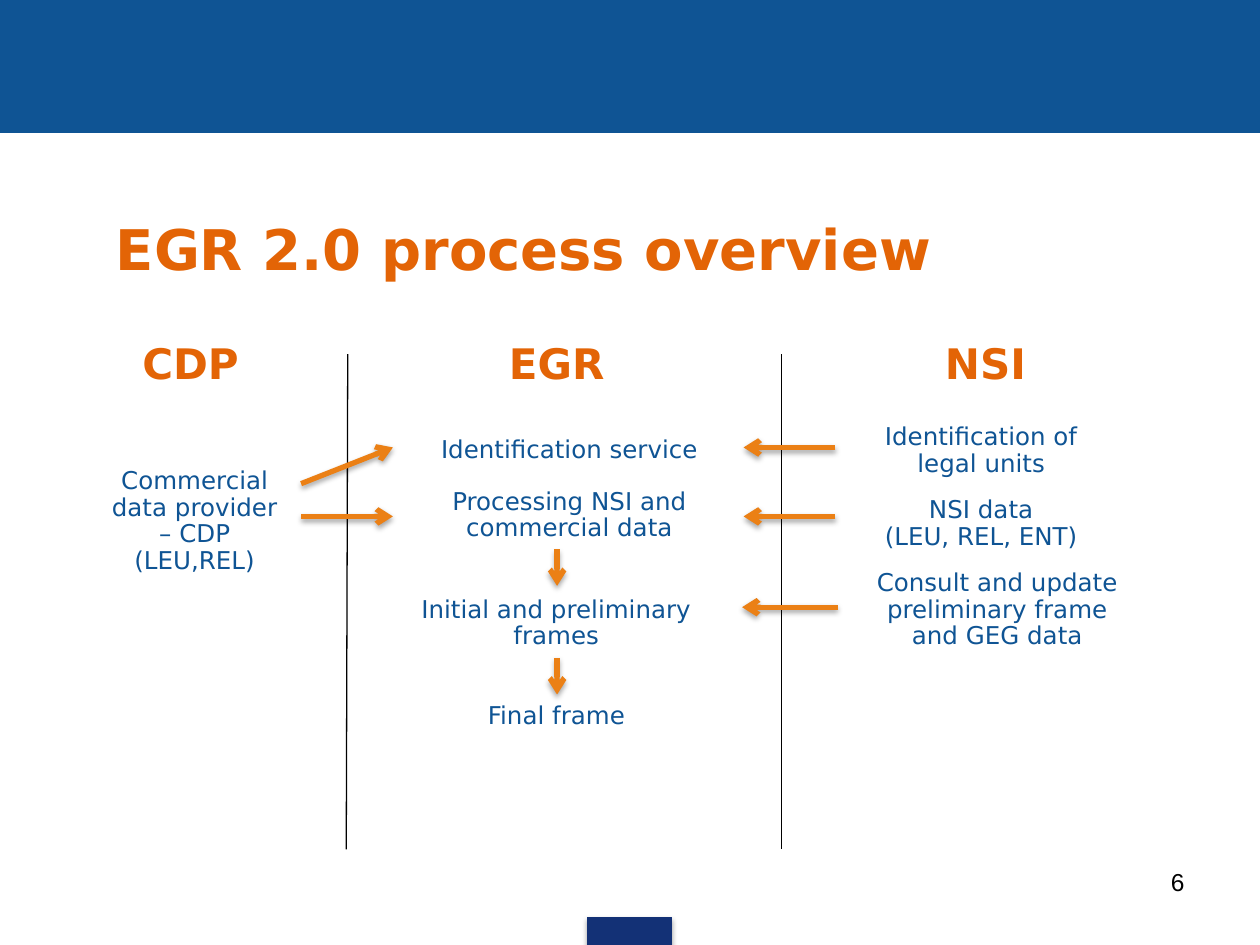
from dataclasses import dataclass

from lxml.etree import SubElement
from pptx import Presentation
from pptx.dml.color import RGBColor
from pptx.enum.shapes import MSO_CONNECTOR as Connector, MSO_SHAPE as Shape
from pptx.enum.text import MSO_ANCHOR as Anchor, MSO_AUTO_SIZE as AutoSize, PP_ALIGN as Align
from pptx.oxml.ns import qn
from pptx.util import Cm, Pt


@dataclass(frozen=True)
class Theme:
    """Colours, fonts and type sizes of the slide."""
    blue: str = "0F5494"
    navy: str = "133176"
    orange: str = "E36406"
    arrow: str = "EB8015"
    black: str = "000000"
    font: str = "DejaVu Sans"
    number_font: str = "Arial"
    title: int = 32
    heading: int = 24
    body: int = 14


THEME = Theme()
HEADING_INDENT = Cm(0.99)
HEADINGS = [("CDP", 1.63, 4.6), ("EGR", 9.02, 3.99), ("NSI", 17.81, 3.94)]
LABELS = [
    ("Commercial data provider – CDP (LEU,REL)", 1.83, 9.32, 4.19, 2.41),
    ("Identification service", 8.51, 8.69, 5.94, 0.79),
    ("Processing NSI and commercial data", 8.51, 9.73, 5.94, 1.35),
    ("Initial and preliminary frames", 7.95, 11.91, 6.53, 1.35),
    ("Final frame", 8.59, 14.05, 5.26, 0.79),
    ("Identification of legal units", 17.48, 8.43, 4.6, 1.35),
    ("NSI data\v(LEU, REL, ENT)", 17.48, 9.91, 4.6, 1.35),
    ("Consult and update preliminary frame and GEG data", 17.3, 11.38, 5.61, 1.88),
]
DIVIDERS = [(7.01, 7.14, 6.98, 17.12), (15.75, 7.14, 15.75, 17.12)]
ARROWS = [
    (6.07, 9.75, 7.92, 9.02),
    (6.07, 10.41, 7.92, 10.41),
    (16.84, 9.02, 14.99, 9.02),
    (16.84, 10.41, 14.99, 10.41),
    (16.89, 12.24, 14.96, 12.24),
    (11.23, 11.07, 11.23, 11.81),
    (11.23, 13.26, 11.23, 14),
]


def add_effects(shape, shadow):
    """Give a shape an effect list, holding a soft shadow or nothing."""
    effects = SubElement(shape._element.spPr, qn("a:effectLst"))
    if shadow:
        outer = SubElement(effects, qn("a:outerShdw"), blurRad="39370", dist="23000",
                           dir="5400000", rotWithShape="0")
        color = SubElement(outer, qn("a:srgbClr"), val=THEME.black)
        SubElement(color, qn("a:alpha"), val="35000")


def add_bar(slide, box, color, shadow=False):
    """Add a plain filled rectangle."""
    bar = slide.shapes.add_shape(Shape.RECTANGLE, *map(Cm, box))
    bar.fill.solid()
    bar.fill.fore_color.rgb = RGBColor.from_string(color)
    bar.line.color.rgb = RGBColor.from_string(color)
    bar.line.width = Pt(0.75)
    add_effects(bar, shadow)


def add_line(slide, ends, color, width, arrow=False):
    """Add a straight line, or a shadowed arrow pointing at its end."""
    line = slide.shapes.add_connector(Connector.STRAIGHT, *map(Cm, ends))
    line.line.color.rgb = RGBColor.from_string(color)
    line.line.width = Pt(width)
    if arrow:
        SubElement(line.line._get_or_add_ln(), qn("a:tailEnd"), type="arrow")
    add_effects(line, arrow)


def write_text(shape, text, size, color, align, font=THEME.font, bold=False, indent=0):
    """Fill a shape with one formatted paragraph and return the paragraph."""
    frame = shape.text_frame
    frame.text = text
    frame.word_wrap = True
    frame.auto_size = AutoSize.NONE
    paragraph = frame.paragraphs[0]
    paragraph.alignment = align
    if indent:
        properties = paragraph._p.get_or_add_pPr()
        properties.set("marL", str(indent))
        properties.set("indent", "0")
    for run in paragraph.runs:
        run.font.name = font
        run.font.size = Pt(size)
        run.font.bold = bold
        run.font.color.rgb = RGBColor.from_string(color)
    return paragraph


def add_text(slide, box, *content, **style):
    """Add a text box and return its paragraph."""
    return write_text(slide.shapes.add_textbox(*map(Cm, box)), *content, **style)


def set_title(slide, text):
    """Place and format the title placeholder."""
    title = slide.shapes.title
    title.left, title.top, title.width, title.height = map(Cm, (1.09, 4.11, 22.86, 1.8))
    write_text(title, text, THEME.title, THEME.orange, Align.LEFT,
               bold=True, indent=HEADING_INDENT)
    title.text_frame.vertical_anchor = Anchor.MIDDLE


def main():
    """Build the slide and save it."""
    presentation = Presentation()
    presentation.slide_width, presentation.slide_height = Cm(25.4), Cm(19.05)
    slide = presentation.slides.add_slide(presentation.slide_layouts[5])
    add_bar(slide, (0, 0, 25.4, 2.67), THEME.blue)
    add_bar(slide, (11.84, 18.49, 1.7, 0.56), THEME.navy, shadow=True)
    set_title(slide, "EGR 2.0 process overview")
    for ends in DIVIDERS:
        add_line(slide, ends, THEME.black, 0.75)
    for text, left, width in HEADINGS:
        add_text(slide, (left, 6.68, width, 1.27), text, THEME.heading, THEME.orange,
                 Align.LEFT, bold=True, indent=HEADING_INDENT)
    for text, *box in LABELS:
        paragraph = add_text(slide, box, text, THEME.body, THEME.blue, Align.CENTER)
        paragraph.line_spacing = 0.9
    for ends in ARROWS:
        add_line(slide, ends, THEME.arrow, 3, arrow=True)
    add_text(slide, (18.21, 17.35, 5.92, 1.32), "6", THEME.body, THEME.black,
             Align.RIGHT, font=THEME.number_font)
    presentation.save("out.pptx")


if __name__ == "__main__":
    main()
